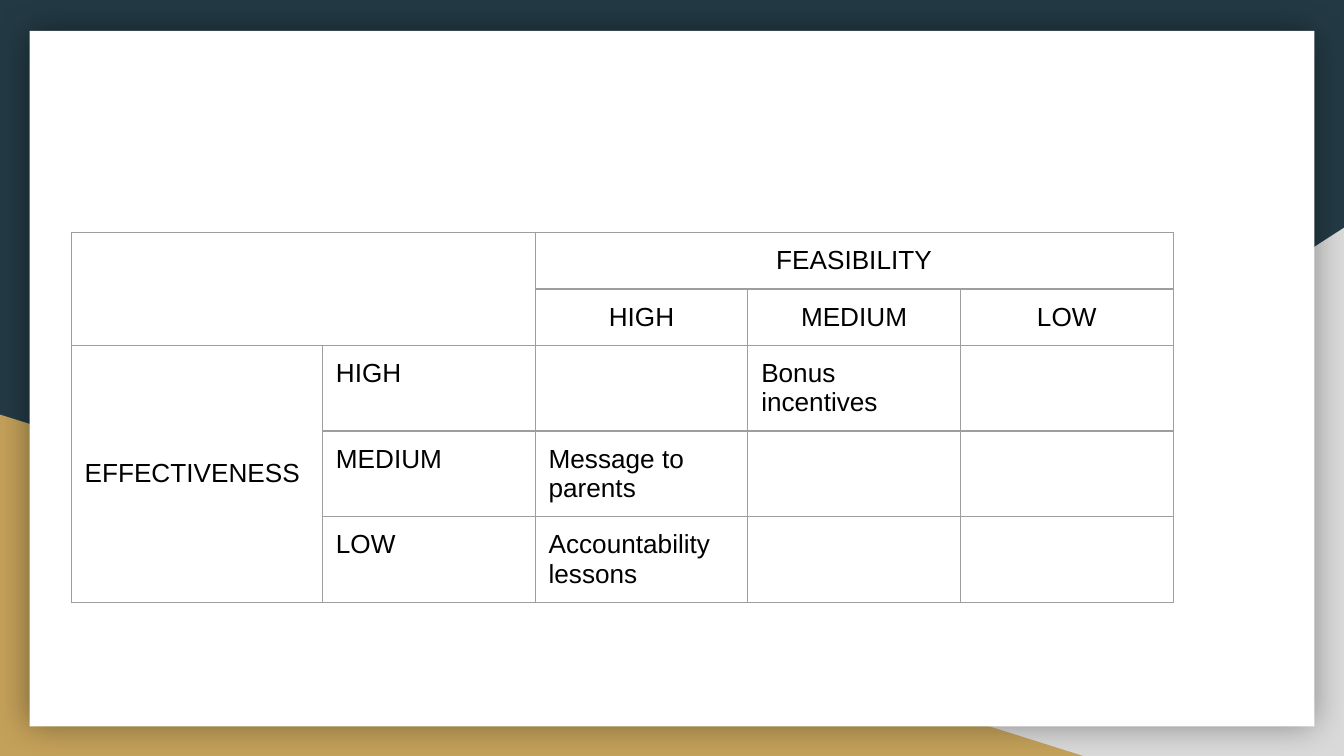
from lxml.etree import SubElement
from pptx import Presentation
from pptx.dml.color import RGBColor
from pptx.enum.shapes import MSO_SHAPE
from pptx.enum.text import MSO_ANCHOR, PP_ALIGN
from pptx.oxml import parse_xml
from pptx.oxml.ns import nsdecls, qn
from pptx.util import Inches, Pt

NAVY = RGBColor(0x23, 0x3A, 0x44)
GREY = RGBColor(0xD9, 0xD9, 0xD9)
GOLD = RGBColor(0xC4, 0xA1, 0x5A)
WHITE = RGBColor(0xFF, 0xFF, 0xFF)
BLACK = RGBColor(0, 0, 0)
RULE = RGBColor(0x9E, 0x9E, 0x9E)

LABEL_WIDTH = 1.87
ROW_HEIGHT = 0.42
HEADER_ROWS = 2
MATRIX = [
    ["", "", "FEASIBILITY", "", ""],
    ["", "", "HIGH", "MEDIUM", "LOW"],
    ["EFFECTIVENESS", "HIGH", "", "Bonus incentives", ""],
    ["", "MEDIUM", "Message to parents", "", ""],
    ["", "LOW", "Accountability lessons", "", ""],
]
SPANS = [((0, 0), (1, 1)), ((0, 2), (0, 4)), ((2, 0), (4, 0))]


def write_text(frame, text, size=14, font="Arial", color=BLACK, align=PP_ALIGN.LEFT):
    paragraph = frame.paragraphs[0]
    paragraph.alignment = align
    if text:
        run = paragraph.add_run()
        run.text = text
        run.font.size = Pt(size)
        run.font.name = font
        run.font.color.rgb = color
    else:
        ending = SubElement(paragraph._p, qn("a:endParaRPr"), sz=str(size * 100))
        SubElement(ending, qn("a:latin"), typeface=font)


def add_panel(slide, kind, box, color):
    panel = slide.shapes.add_shape(kind, *map(Inches, box))
    panel.shadow.inherit = False
    panel.fill.solid()
    panel.fill.fore_color.rgb = color
    panel.line.fill.background()
    return panel


def mirror(panel):
    panel._element.spPr.find(qn("a:xfrm")).set("flipH", "1")


def add_glow(panel, color, alpha, blur):
    effects = panel._element.spPr.find(qn("a:effectLst"))
    effects.append(parse_xml(
        f'<a:outerShdw {nsdecls("a")} blurRad="{Pt(blur)}" dist="0" dir="0" '
        f'algn="ctr" rotWithShape="0"><a:srgbClr val="{color}">'
        f'<a:alpha val="{alpha * 1000}"/></a:srgbClr></a:outerShdw>'))


def add_borders(cell, color, width):
    properties = cell._tc.get_or_add_tcPr()
    for position, side in enumerate("LRTB"):
        properties.insert(position, parse_xml(
            f'<a:ln{side} {nsdecls("a")} w="{Pt(width)}"><a:solidFill>'
            f'<a:srgbClr val="{color}"/></a:solidFill></a:ln{side}>'))


def add_backdrop(slide, width, height):
    slide.background.fill.solid()
    slide.background.fill.fore_color.rgb = NAVY
    triangle = MSO_SHAPE.RIGHT_TRIANGLE
    mirror(add_panel(slide, triangle, (width - 6.08, height - 3.93, 6.08, 3.93), GREY))
    add_panel(slide, triangle, (0, height - 2.54, 8.06, 2.54), GOLD)
    card = add_panel(slide, MSO_SHAPE.RECTANGLE,
                     (0.22, 0.23, width - 0.44, height - 0.45), WHITE)
    add_glow(card, BLACK, alpha=40, blur=18)


def add_matrix(slide, left, top, width):
    column_count = len(MATRIX[0])
    level_width = (width - LABEL_WIDTH) / (column_count - 1)
    matrix = slide.shapes.add_table(
        len(MATRIX), column_count, Inches(left), Inches(top),
        Inches(width), Inches(ROW_HEIGHT * len(MATRIX))).table
    matrix.first_row = False
    matrix.horz_banding = False
    for index, column in enumerate(matrix.columns):
        column.width = Inches(level_width if index else LABEL_WIDTH)
    for row_index, labels in enumerate(MATRIX):
        align = PP_ALIGN.CENTER if row_index < HEADER_ROWS else PP_ALIGN.LEFT
        for column_index, label in enumerate(labels):
            cell = matrix.cell(row_index, column_index)
            cell.margin_left = cell.margin_right = Inches(0.1)
            cell.margin_top = cell.margin_bottom = Inches(0.1)
            cell.fill.background()
            add_borders(cell, RULE, 0.75)
            write_text(cell.text_frame, label, align=align)
    for first, last in SPANS:
        matrix.cell(*first).merge(matrix.cell(*last))
    matrix.cell(HEADER_ROWS, 0).vertical_anchor = MSO_ANCHOR.MIDDLE


def main():
    width = 10
    height = width * 9 / 16
    deck = Presentation()
    deck.slide_width = Inches(width)
    deck.slide_height = Inches(height)
    slide = deck.slides.add_slide(deck.slide_layouts[6])
    add_backdrop(slide, width, height)
    add_matrix(slide, 0.53, 1.73, 8.2)
    deck.save("out.pptx")


if __name__ == "__main__":
    main()
